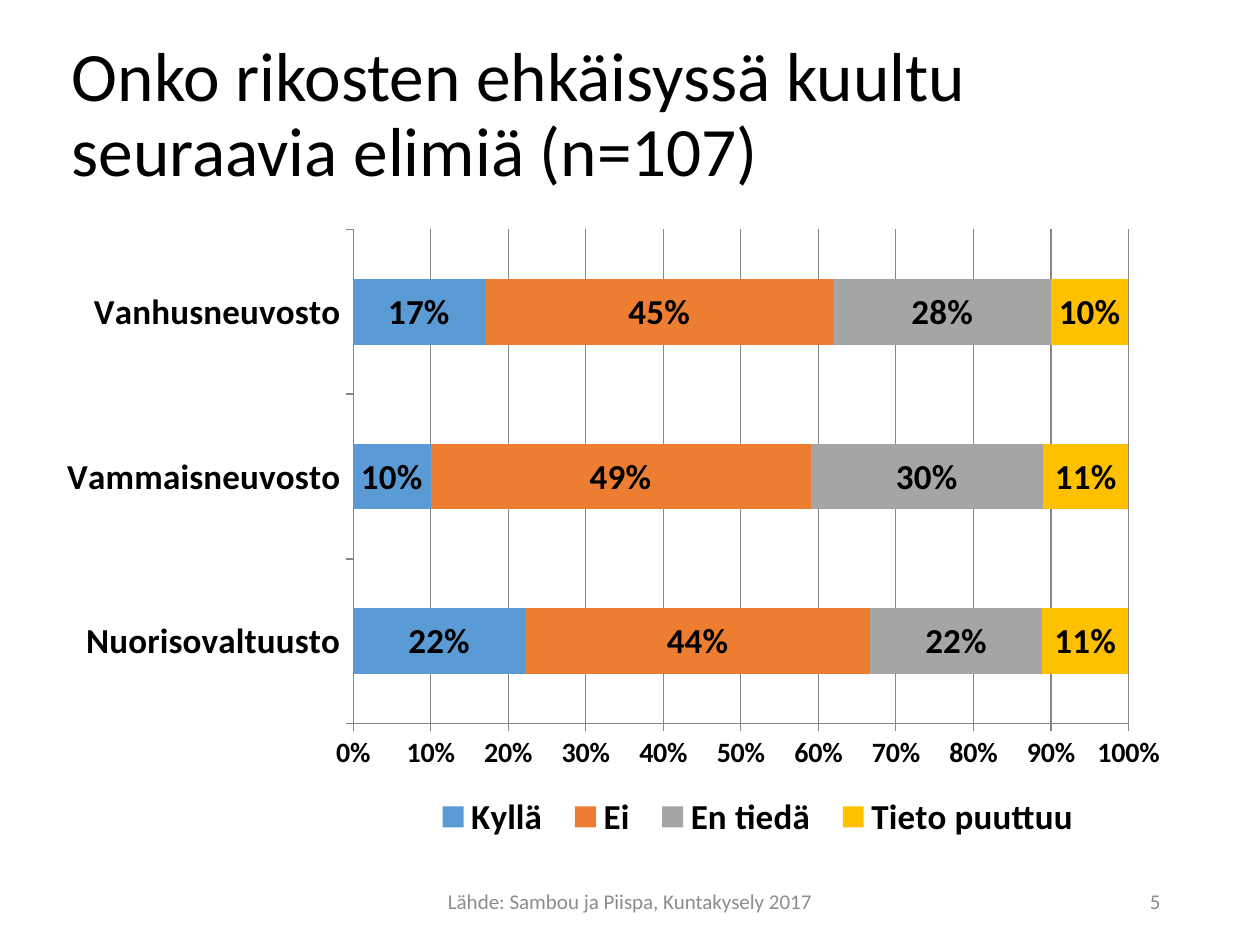
from dataclasses import dataclass

from lxml import etree
from pptx import Presentation
from pptx import util as u
from pptx.chart.data import CategoryChartData
from pptx.dml.color import RGBColor
from pptx.enum import chart as ch, text as tx
from pptx.oxml.ns import qn


@dataclass(frozen=True)
class Theme:
    font: str = "Calibri"
    ink: str = "000000"
    muted: str = "8C8C8C"
    grid: str = "868686"
    title: float = 39.6
    label: float = 20
    scale: float = 16
    footer: float = 12


THEME = Theme()
WIDTH, HEIGHT = 10, 7.5

COUNCILS = ["Nuorisovaltuusto", "Vammaisneuvosto", "Vanhusneuvosto"]
ANSWERS = [
    ("Kyllä", [0.22, 0.10, 0.17], "5B9BD5"),
    ("Ei", [0.44, 0.49, 0.45], "ED7D31"),
    ("En tiedä", [0.22, 0.30, 0.28], "A5A5A5"),
    ("Tieto puuttuu", [0.11, 0.11, 0.10], "FFC000"),
]


def style_font(font, size, color=THEME.ink, bold=False):
    font.name = THEME.font
    font.size = u.Pt(size)
    font.bold = bold
    font.color.rgb = RGBColor.from_string(color)


def write(shape, wording, *, size, color=THEME.ink,
          align=tx.PP_ALIGN.LEFT, anchor=tx.MSO_ANCHOR.MIDDLE, spacing=1.0):
    frame = shape.text_frame
    frame.word_wrap = True
    frame.auto_size = tx.MSO_AUTO_SIZE.NONE
    frame.vertical_anchor = anchor
    paragraph = frame.paragraphs[0]
    paragraph.alignment = align
    paragraph.line_spacing = spacing
    run = paragraph.add_run()
    run.text = wording
    style_font(run.font, size, color)


def add_title(slide, wording):
    """The lower edge is fixed, so a second line grows upwards."""
    title = slide.shapes.title
    title.left, title.top = u.Inches(0.47), u.Inches(0.88)
    title.width, title.height = u.Inches(9.06), u.Inches(0.64)
    title.text_frame.margin_bottom = 0
    write(title, wording, size=THEME.title, anchor=tx.MSO_ANCHOR.BOTTOM,
          spacing=0.9)


def add_footer(slide, wording, left, width, align):
    box = slide.shapes.add_textbox(u.Inches(left), u.Inches(6.95),
                                   u.Inches(width), u.Inches(0.4))
    write(box, wording, size=THEME.footer, color=THEME.muted, align=align)


def place(part, inner=False, **shares):
    """Fix a chart part at x, y, w and h, given as shares of the chart."""
    for old in part.findall(qn("c:layout")):
        part.remove(old)
    layout = etree.Element(qn("c:layout"))
    manual = etree.SubElement(layout, qn("c:manualLayout"))
    settings = {"layoutTarget": "inner"} if inner else {}
    settings.update(xMode="edge", yMode="edge", **shares)
    for tag, value in settings.items():
        etree.SubElement(manual, qn(f"c:{tag}")).set("val", str(value))
    position = part.find(qn("c:legendPos"))
    if position is None:
        part.insert(0, layout)
    else:
        position.addnext(layout)


def style_line(line):
    line.color.rgb = RGBColor.from_string(THEME.grid)
    line.width = u.Pt(0.75)


def style_axis(axis, size):
    axis.major_tick_mark = ch.XL_TICK_MARK.OUTSIDE
    axis.minor_tick_mark = ch.XL_TICK_MARK.NONE
    style_font(axis.tick_labels.font, size, bold=True)
    style_line(axis.format.line)


def style_series(series, color):
    series.format.fill.solid()
    series.format.fill.fore_color.rgb = RGBColor.from_string(color)
    series.invert_if_negative = False
    labels = series.data_labels
    labels.show_value = True
    labels.number_format = "0%"
    labels.number_format_is_linked = False
    style_font(labels.font, THEME.label, bold=True)


def add_answer_chart(slide):
    data = CategoryChartData(number_format="0%")
    data.categories = COUNCILS
    for answer, shares, _ in ANSWERS:
        data.add_series(answer, shares)
    chart = slide.shapes.add_chart(
        ch.XL_CHART_TYPE.BAR_STACKED_100, u.Inches(0.36), u.Inches(1.72),
        u.Inches(9.05), u.Inches(5.03), data).chart
    chart.has_title = False
    style_font(chart.font, THEME.scale, bold=True)

    plot = chart.plots[0]
    plot.gap_width, plot.overlap, plot.vary_by_categories = 150, 100, False
    for series, (_, _, color) in zip(plot.series, ANSWERS):
        style_series(series, color)

    style_axis(chart.category_axis, THEME.label)
    scale = chart.value_axis
    style_axis(scale, THEME.scale)
    scale.minimum_scale, scale.maximum_scale, scale.major_unit = 0, 1, 0.1
    scale.tick_labels.number_format = "0%"
    scale.tick_labels.number_format_is_linked = False
    scale.has_major_gridlines = True
    style_line(scale.major_gridlines.format.line)

    chart.has_legend = True
    legend = chart.legend
    legend.position = ch.XL_LEGEND_POSITION.BOTTOM
    legend.include_in_layout = False
    style_font(legend.font, THEME.label, bold=True)

    plot_area = chart.element.find(f".//{qn('c:plotArea')}")
    place(plot_area, inner=True, x=0.27, y=0.02, w=0.68, h=0.78)
    place(legend.element if hasattr(legend, "element") else
          chart.element.find(f".//{qn('c:legend')}"),
          x=0.33, y=0.91, w=0.59, h=0.08)


def main():
    deck = Presentation()
    deck.slide_width, deck.slide_height = u.Inches(WIDTH), u.Inches(HEIGHT)
    slide = deck.slides.add_slide(deck.slide_layouts.get_by_name("Title Only"))
    add_title(slide, "Onko rikosten ehkäisyssä kuultu seuraavia elimiä (n=107)")
    add_answer_chart(slide)
    add_footer(slide, "Lähde: Sambou ja Piispa, Kuntakysely 2017",
               3.31, 3.38, tx.PP_ALIGN.CENTER)
    add_footer(slide, "5", 7.06, 2.25, tx.PP_ALIGN.RIGHT)
    deck.save("out.pptx")


if __name__ == "__main__":
    main()
